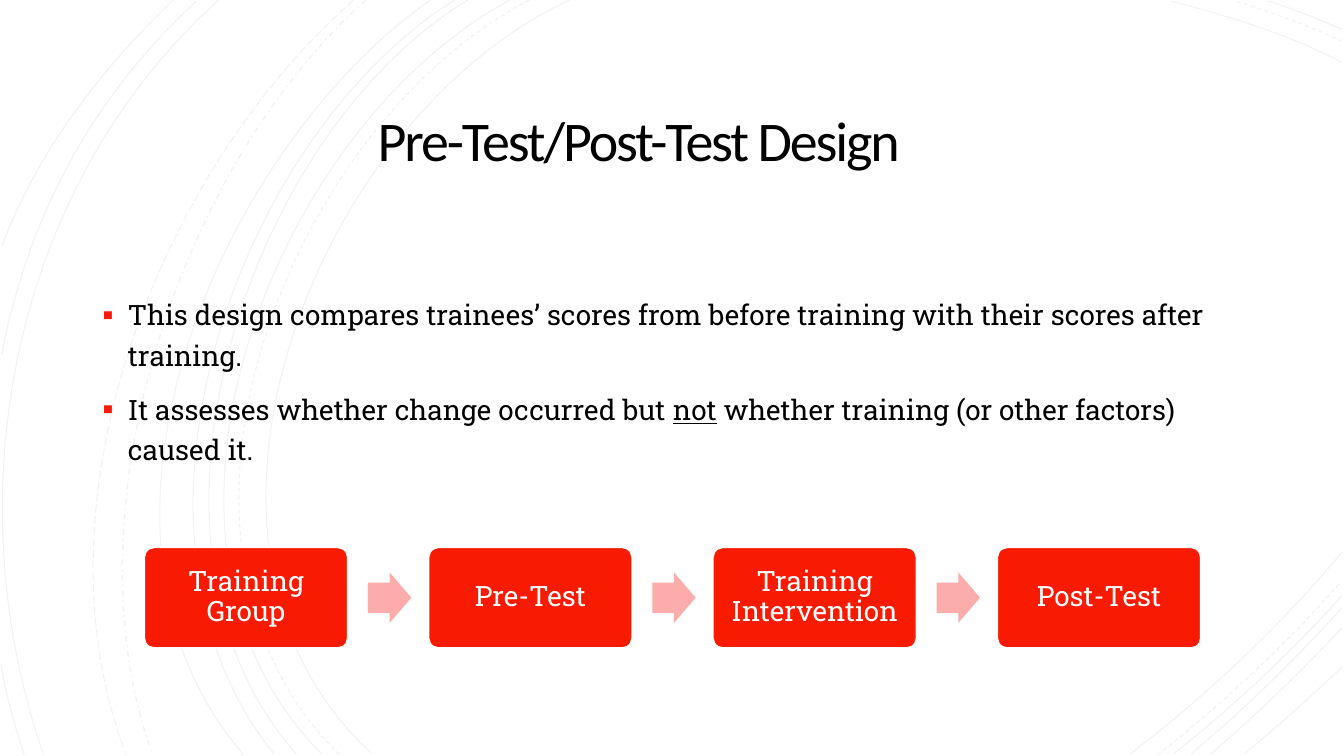
from lxml import etree
from pptx import Presentation, util as u
from pptx.dml import color
from pptx.enum import dml, shapes, text
from pptx.oxml import ns

I = u.Inches
RED, PINK, WHITE, BLACK, GREY = "F81B02", "FBACAB", "FFFFFF", "000000", "F2F2F2"
SERIF, SANS = "Roboto Slab", "Calibri"
DASH = dml.MSO_LINE.DASH

ARCS = [
    (((5.65, 0), (3.15, 1.15), (1.43, 5.4), (3.69, 7.48)), None),
    (((13.31, 0.62), (12.78, 0.34), (12.18, 0.16), (11.62, 0.01)), None),
    (((11.21, 7.48), (11.97, 6.9), (12.69, 6.22), (13.31, 5.48)), None),
    (((5.25, 0), (2.85, 1.25), (1.23, 5.37), (3.36, 7.48)), DASH),
    (((13.31, 0.41), (12.97, 0.25), (12.6, 0.12), (12.25, 0.01)), DASH),
    (((11.48, 7.49), (12.13, 6.98), (12.75, 6.4), (13.3, 5.77)), DASH),
    (((5.06, 0), (2.7, 1.27), (1.1, 5.37), (3.19, 7.48)), None),
    (((13.31, 0.29), (13.07, 0.19), (12.83, 0.09), (12.58, 0.01)), None),
    (((11.64, 7.48), (12.23, 7.01), (12.8, 6.48), (13.31, 5.91)), None),
    (((4.64, 0), (2.44, 1.33), (1.1, 5.41), (2.94, 7.48)), None),
    (((11.81, 7.48), (12.34, 7.04), (12.84, 6.55), (13.31, 6.03)), None),
    (((4.51, 0), (2.31, 1.38), (0.97, 5.33), (2.72, 7.48)), None),
    (((12.01, 7.48), (12.46, 7.09), (12.9, 6.67), (13.31, 6.23)), None),
    (((4.27, 0), (2.17, 1.47), (0.53, 5.29), (2.41, 7.48)), None),
    (((12.34, 7.48), (12.67, 7.21), (12.99, 6.92), (13.31, 6.62)), None),
    (((3.63, 0), (1.76, 1.66), (0.65, 5.09), (1.51, 7.48)), dml.MSO_LINE.DASH_DOT),
    (((3.51, 0), (1.57, 1.69), (0.29, 4.99), (1.25, 7.48)), dml.MSO_LINE.LONG_DASH),
    (((2.17, 0), (0.11, 1.85), (-0.46, 4.9), (0.43, 7.48)), None),
    (((1.95, 0.01), (0.92, 0.96), (0.28, 2.14), (0.02, 3.51)), None),
    (((0.01, 6.58), (0.06, 6.89), (0.14, 7.19), (0.24, 7.48)), None),
    (((1.72, 0), (1, 0.69), (0.37, 1.5), (0.02, 2.44)), None),
]


def rgb(value):
    return color.RGBColor.from_string(value)


def add_run(p, words, font=SERIF, size=20, fill=BLACK, underline=None, spacing=None):
    r = p.add_run()
    r.text = words
    r.font.name, r.font.size = font, u.Pt(size)
    r.font.color.rgb = rgb(fill)
    r.font.underline = underline
    if spacing is not None:
        r.font._element.set("spc", str(int(spacing * 100)))
    return r


def set_frame(tf, inset_x, inset_y, anchor):
    tf.word_wrap = True
    tf.auto_size = text.MSO_AUTO_SIZE.NONE
    tf.margin_left = tf.margin_right = I(inset_x)
    tf.margin_top = tf.margin_bottom = I(inset_y)
    tf.vertical_anchor = anchor


def set_bullet(p):
    pPr = p._p.get_or_add_pPr()
    pPr.set("marL", str(I(0.25)))
    pPr.set("indent", str(-I(0.25)))
    clr = etree.SubElement(pPr, ns.qn("a:buClr"))
    etree.SubElement(clr, ns.qn("a:srgbClr"), val=RED)
    etree.SubElement(pPr, ns.qn("a:buSzPct"), val="110000")
    etree.SubElement(pPr, ns.qn("a:buFont"), typeface=SANS)
    etree.SubElement(pPr, ns.qn("a:buChar"), char="▪")


def bend(sp):
    segments = list(sp._element.iter(ns.qn("a:lnTo")))
    curve = etree.Element(ns.qn("a:cubicBezTo"))
    segments[0].addprevious(curve)
    for segment in segments:
        curve.append(segment[0])
        segment.getparent().remove(segment)


def add_arcs(s, left, top, arcs):
    for points, dash in arcs:
        start, *rest = [(I(left + x), I(top + y)) for x, y in points]
        fb = s.shapes.build_freeform(*start)
        fb.add_line_segments(rest, close=False)
        sp = fb.convert_to_shape()
        bend(sp)
        sp.shadow.inherit = False
        sp.fill.background()
        sp.line.color.rgb = rgb(GREY)
        sp.line.width = u.Pt(1 if dash == dml.MSO_LINE.DASH_DOT else 0.75)
        if dash:
            sp.line.dash_style = dash


def add_title(s, left, top, width, height):
    tf = s.shapes.add_textbox(I(left), I(top), I(width), I(height)).text_frame
    set_frame(tf, 0.25, 0.25, text.MSO_ANCHOR.MIDDLE)
    p = tf.paragraphs[0]
    p.alignment, p.line_spacing = text.PP_ALIGN.CENTER, 0.85
    add_run(p, "Pre-Test/Post-Test Design", font=SANS, size=40, spacing=-1.5)


def add_body(s, left, top, width, height):
    tf = s.shapes.add_textbox(I(left), I(top), I(width), I(height)).text_frame
    set_frame(tf, 0.1, 0.48, text.MSO_ANCHOR.TOP)
    first, second = tf.paragraphs[0], tf.add_paragraph()
    for p in (first, second):
        set_bullet(p)
        p.line_spacing = 1.2
    second.space_before = u.Pt(10)
    add_run(first, "This design compares trainees’ scores from before training "
                   "with their scores after training.")
    add_run(second, "It assesses whether change occurred but ")
    add_run(second, "not", underline=True)
    add_run(second, " whether training (or other factors) caused it.")


def add_block(s, kind, left, top, width, height, fill, adjustments=()):
    sp = s.shapes.add_shape(kind, I(left), I(top), I(width), I(height))
    sp.shadow.inherit = False
    sp.fill.solid()
    sp.fill.fore_color.rgb = rgb(fill)
    sp.line.fill.background()
    for i, value in enumerate(adjustments):
        sp.adjustments[i] = value
    return sp


def add_process(s, left, top, width, height, steps):
    box_w, arrow_w, arrow_h = 2.02, 0.43, 0.5
    pitch = (width - box_w) / (len(steps) - 1)
    for i, step in enumerate(steps):
        x = left + i * pitch
        sp = add_block(s, shapes.MSO_SHAPE.ROUNDED_RECTANGLE, x, top, box_w, height, RED, [0.1])
        sp.line.color.rgb = rgb(WHITE)
        sp.line.width = u.Pt(1.25)
        set_frame(sp.text_frame, 0.08, 0.08, text.MSO_ANCHOR.MIDDLE)
        p = sp.text_frame.paragraphs[0]
        p.alignment, p.line_spacing = text.PP_ALIGN.CENTER, 0.9
        add_run(p, step, fill=WHITE)
        if i < len(steps) - 1:
            add_block(s, shapes.MSO_SHAPE.RIGHT_ARROW, x + box_w + 0.2,
                      top + (height - arrow_h) / 2, arrow_w, arrow_h, PINK, [0.6, 0.5])


def main():
    prs = Presentation()
    prs.slide_width, prs.slide_height = I(13.33), I(7.5)
    s = prs.slides.add_slide(prs.slide_layouts[6])
    add_block(s, shapes.MSO_SHAPE.RECTANGLE, 0, 0, 13.33, 7.5, WHITE)
    add_arcs(s, 0, 0, ARCS)
    add_title(s, 0.92, 0.69, 10.83, 1.48)
    add_body(s, 0.92, 2.41, 11.5, 4.2)
    add_process(s, 1.43, 5.43, 10.48, 1,
                ["Training Group", "Pre-Test", "Training Intervention", "Post-Test"])
    prs.save("out.pptx")


if __name__ == "__main__":
    main()
